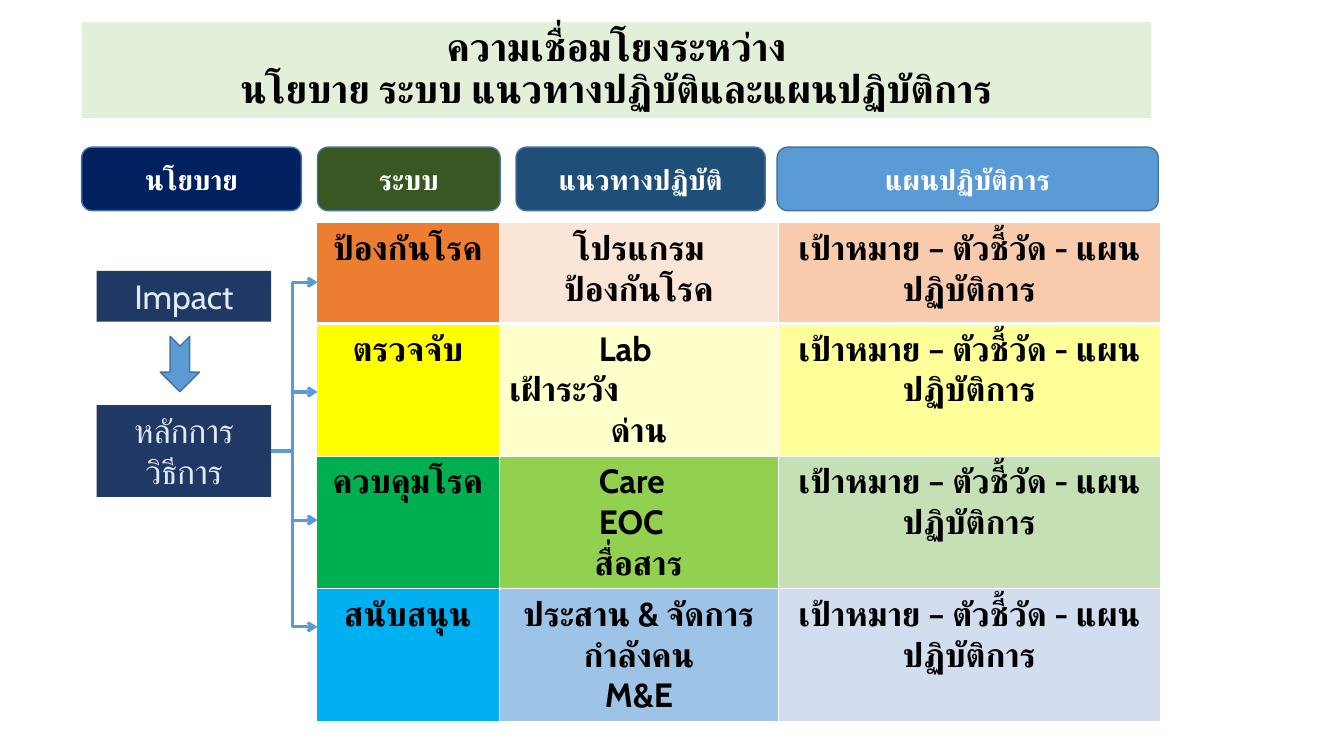
from lxml import etree
from pptx import Presentation
from pptx.dml.color import RGBColor
from pptx.enum.shapes import MSO_CONNECTOR, MSO_SHAPE
from pptx.enum.text import MSO_ANCHOR, MSO_AUTO_SIZE, PP_ALIGN
from pptx.oxml.ns import qn
from pptx.util import Pt

LEFT, MID = PP_ALIGN.LEFT, PP_ALIGN.CENTER
TOP, CENTER = MSO_ANCHOR.TOP, MSO_ANCHOR.MIDDLE
FIXED = MSO_AUTO_SIZE.NONE
RECT, ROUND = MSO_SHAPE.RECTANGLE, MSO_SHAPE.ROUNDED_RECTANGLE
NOTCH = MSO_SHAPE.NOTCHED_RIGHT_ARROW
STRAIGHT = MSO_CONNECTOR.STRAIGHT

FONT = "Cabin"
BLUE, EDGE, NAVY = "5B9BD5", "43739E", "203864"
PLAN = "เป้าหมาย – ตัวชี้วัด - แผนปฏิบัติการ"

HEADS = [  # left, width, fill, label
    (58.3, 157, "002060", "นโยบาย"),
    (226.8, 130.5, "385723", "ระบบ"),
    (368.6, 178, "1F4E79", "แนวทางปฏิบัติ"),
    (555.1, 272.2, BLUE, "แผนปฏิบัติการ"),
]
COLS = [130.5, 199.5, 272.7]
ROWS = [  # height, fills, system, guidelines
    (72, ("ED7D31", "FBE5D6", "F8CBAD"), "ป้องกันโรค",
     ["โปรแกรม", "ป้องกันโรค"]),
    (84, ("FFFF00", "FFFFCC", "FFFF99"), "ตรวจจับ",
     ["Lab\t", ("เฝ้าระวัง", LEFT), "ด่าน"]),
    (89.5, ("00B050", "92D050", "C5E0B4"), "ควบคุมโรค",
     ["Care\t", "EOC\t", "สื่อสาร"]),
    (89.5, ("00B0F0", "9DC3E6", "D2DEEF"), "สนับสนุน",
     ["ประสาน & จัดการ", "กำลังคน", "M&E"]),
]


def color(code):
    return RGBColor.from_string(code)


def paint(shape, fill, line=None):
    shape.fill.solid()
    shape.fill.fore_color.rgb = color(fill)
    if line:
        shape.line.color.rgb = color(line)
        shape.line.width = Pt(1)
    else:
        shape.line.fill.background()


def write(frame, lines, size=24, ink="000000", bold=True, space=None):
    """Fill a frame; a line is a string or a (string, alignment) pair."""
    frame.word_wrap = True
    for i, item in enumerate(lines):
        text, align = (item, MID) if isinstance(item, str) else item
        para = frame.paragraphs[0] if i == 0 else frame.add_paragraph()
        para.alignment = align
        if space:
            para.line_spacing = space
        if "\t" in text:
            tabs = etree.SubElement(para._p.get_or_add_pPr(), qn("a:tabLst"))
            etree.SubElement(tabs, qn("a:tab"), pos=str(Pt(57)), algn="l")
        for j, part in enumerate(text.split("\n")):
            if j:
                para.add_line_break()
            run = para.add_run()
            run.text = part
            font = run.font
            font.name, font.size, font.bold = FONT, Pt(size), bold
            font.color.rgb = color(ink)
            # Thai letters take the complex-script font
            etree.SubElement(run._r.get_or_add_rPr(), qn("a:cs"), typeface=FONT)


def block(slide, kind, box, fill, line=None):
    shape = slide.shapes.add_shape(kind, *map(Pt, box))
    shape.shadow.inherit = False
    paint(shape, fill, line)
    return shape


def title(slide, box, text):
    shape = slide.shapes.title
    shape.left, shape.top, shape.width, shape.height = map(Pt, box)
    paint(shape, "E2F0D9")
    frame = shape.text_frame
    frame.auto_size, frame.vertical_anchor = FIXED, TOP
    write(frame, [text], size=28, space=0.9)


def heads(slide, top, height):
    for left, width, fill, label in HEADS:
        shape = block(slide, ROUND, (left, top, width, height), fill, EDGE)
        shape.text_frame.vertical_anchor = CENTER
        write(shape.text_frame, [label], size=20, ink="FFFFFF")


def border(cell, top, bottom):
    props = cell._tc.get_or_add_tcPr()
    sides = [("L", 1), ("R", 1), ("T", top), ("B", bottom)]
    for i, (side, width) in enumerate(sides):
        line = etree.Element(qn("a:ln" + side), w=str(Pt(width)))
        fill = etree.SubElement(line, qn("a:solidFill"))
        etree.SubElement(fill, qn("a:srgbClr"), val="FFFFFF")
        props.insert(i, line)


def grid(slide, left, top):
    size = sum(COLS), sum(row[0] for row in ROWS)
    table = slide.shapes.add_table(
        len(ROWS), len(COLS), *map(Pt, (left, top, *size))).table
    for col, width in zip(table.columns, COLS):
        col.width = Pt(width)
    for r, (height, fills, name, guide) in enumerate(ROWS):
        table.rows[r].height = Pt(height)
        for c, lines in enumerate(([name], guide, [PLAN])):
            cell = table.cell(r, c)
            cell.fill.solid()
            cell.fill.fore_color.rgb = color(fills[c])
            border(cell, 3 if r == 1 else 1, 3 if r == 0 else 1)
            write(cell.text_frame, lines)


def policy(slide, left, top, width):
    """Stack the two policy boxes and return the lower one."""
    for drop, height, lines in ((0, 36.3, ["Impact"]),
                                (96, 65.5, ["หลักการ", "วิธีการ"])):
        shape = block(slide, RECT, (left, top + drop, width, height), NAVY)
        shape.text_frame.vertical_anchor = TOP
        write(shape.text_frame, lines, ink="DEEBF7", bold=False)
    arrow = block(slide, NOTCH, (left + 39.6, top + 52.6, 39.6, 28), BLUE, EDGE)
    arrow.rotation = 90
    return shape


def link(slide, x1, y1, x2, y2, head=False):
    line = slide.shapes.add_connector(STRAIGHT, *map(Pt, (x1, y1, x2, y2)))
    line.line.color.rgb = color(BLUE)
    line.line.width = Pt(2.25)
    if head:
        etree.SubElement(line.line._get_or_add_ln(), qn("a:tailEnd"),
                         type="arrow")
    etree.SubElement(line._element.spPr, qn("a:effectLst"))
    return line


def branch(slide, source, left, right, stops):
    """Link the source box to each row through one upright line."""
    link(slide, left, stops[0], left, stops[-1])
    for y in stops:
        link(slide, left, y, right, y, head=True)
    y = (source.top + source.height / 2) / Pt(1)
    stem = link(slide, left - 15, y, left, y)
    stem.begin_connect(source, 3)


def main():
    deck = Presentation()
    deck.slide_width, deck.slide_height = Pt(960), Pt(540)
    slide = deck.slides.add_slide(deck.slide_layouts[5])
    title(slide, (58.3, 15.8, 764, 68.4),
          "ความเชื่อมโยงระหว่าง\nนโยบาย ระบบ แนวทางปฏิบัติและแผนปฏิบัติการ")
    grid(slide, 226.1, 159.1)
    heads(slide, 105.1, 45.4)
    source = policy(slide, 69.1, 193.4, 124.6)
    branch(slide, source, 208.8, 226.8, [201.6, 280, 371.5, 447.8])
    deck.save("out.pptx")


if __name__ == "__main__":
    main()
